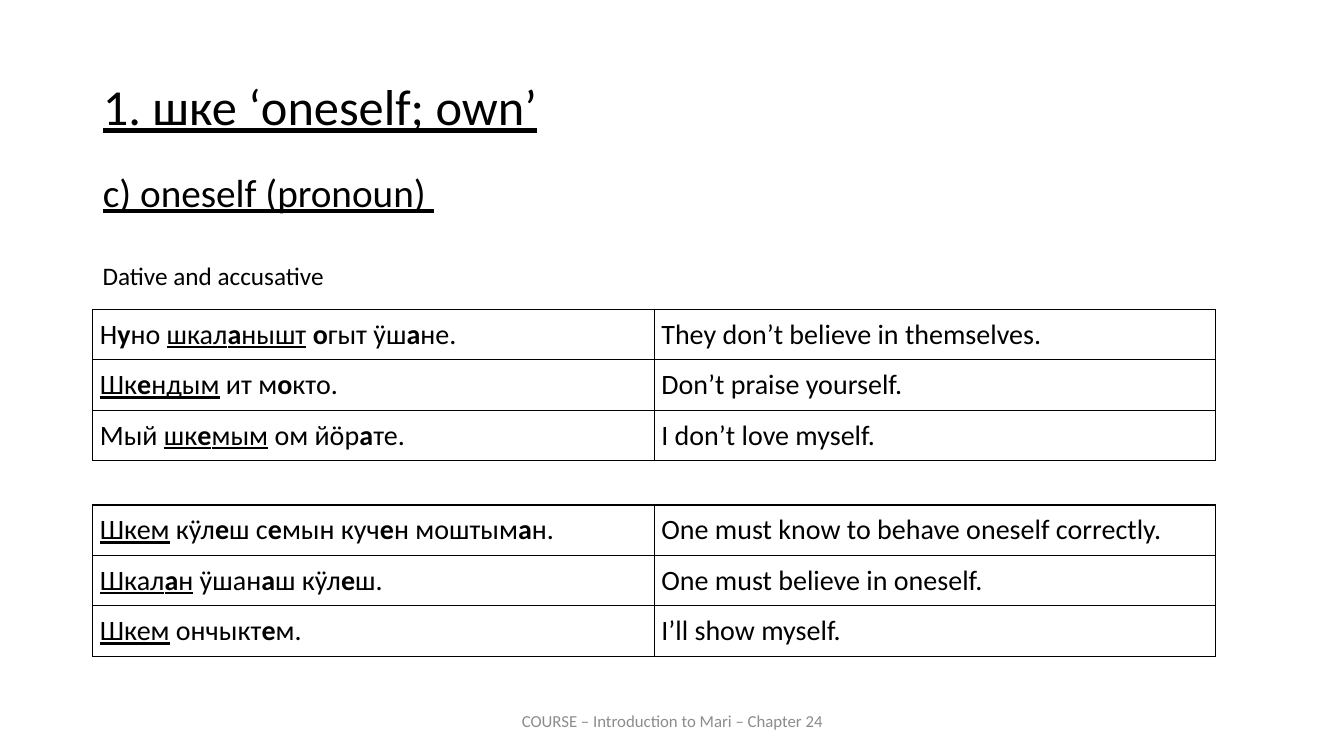
from lxml import etree
from pptx import Presentation
from pptx.dml.color import RGBColor
from pptx.enum.text import MSO_ANCHOR as Anchor, MSO_AUTO_SIZE as AutoSize, PP_ALIGN as Align
from pptx.oxml.ns import qn
from pptx.util import Inches, Pt

BLACK = RGBColor(0, 0, 0)
GREY = RGBColor(0x8C, 0x8C, 0x8C)
FONT = "Calibri"
LEFT = 0.92
COLUMN_WIDTH, ROW_HEIGHT = 5.57, 0.5

# In the sentences, * switches bold and _ switches underline.
PERSONAL = [
    ("Н*у*но _шкал*а*нышт_ *о*гыт ӱш*а*не.", "They don’t believe in themselves."),
    ("_Шк*е*ндым_ ит м*о*кто.", "Don’t praise yourself."),
    ("Мый _шк*е*мым_ ом йӧр*а*те.", "I don’t love myself."),
]
GENERAL = [
    ("_Шкем_ кӱл*е*ш с*е*мын куч*е*н моштым*а*н.",
     "One must know to behave oneself correctly."),
    ("_Шкал*а*н_ ӱшан*а*ш кӱл*е*ш.", "One must believe in oneself."),
    ("_Шкем_ ончыкт*е*м.", "I’ll show myself."),
]


def style(para, size, color=BLACK, align=Align.LEFT, underline=None):
    para.alignment = align
    font = para.font
    font.name, font.size, font.underline = FONT, Pt(size), underline
    font.color.rgb = color


def fill_text(shape, text, box, size, anchor=Anchor.TOP, **looks):
    """Place a shape, write one paragraph in it and return that paragraph."""
    shape.left, shape.top, shape.width, shape.height = map(Inches, box)
    frame = shape.text_frame
    frame.word_wrap = True
    frame.auto_size = AutoSize.NONE
    frame.vertical_anchor = anchor
    para = frame.paragraphs[0]
    para.text = text
    style(para, size, **looks)
    return para


def add_text(page, text, box, size, **looks):
    shape = page.shapes.add_textbox(*map(Inches, box))
    return fill_text(shape, text, box, size, **looks)


def remove_bullet(para):
    props = para._p.get_or_add_pPr()
    props.set("marL", "0")
    props.set("indent", "0")
    etree.SubElement(props, qn("a:buNone"))


def write_marked(para, marked):
    """Split the text at * and _ into bold and underlined runs."""
    for i, part in enumerate(marked.split("_")):
        for j, piece in enumerate(part.split("*")):
            if piece:
                span = para.add_run()
                span.text = piece
                span.font.underline = i % 2 == 1
                span.font.bold = j % 2 == 1


def add_borders(cell):
    props = cell._tc.get_or_add_tcPr()
    for index, side in enumerate(("lnL", "lnR", "lnT", "lnB")):
        line = etree.Element(qn(f"a:{side}"), w=str(Pt(1)))
        solid = etree.SubElement(line, qn("a:solidFill"))
        etree.SubElement(solid, qn("a:srgbClr"), val=str(BLACK))
        props.insert(index, line)


def add_examples(page, sentences, top):
    frame = page.shapes.add_table(
        len(sentences), 2, Inches(LEFT), Inches(top),
        Inches(2 * COLUMN_WIDTH), Inches(ROW_HEIGHT * len(sentences)))
    table = frame.table
    table.first_row = table.horz_banding = False
    for row, pair in zip(table.rows, sentences):
        for cell, marked in zip(row.cells, pair):
            cell.fill.background()
            cell.vertical_anchor = Anchor.MIDDLE
            cell.margin_left = cell.margin_right = Inches(0.07)
            cell.margin_top = cell.margin_bottom = 0
            para = cell.text_frame.paragraphs[0]
            style(para, 20, align=Align.JUSTIFY)
            write_marked(para, marked)
            add_borders(cell)


def main():
    deck = Presentation()
    deck.slide_width, deck.slide_height = Inches(13.33), Inches(7.5)
    page = deck.slides.add_slide(deck.slide_layouts[1])

    heading = fill_text(page.shapes.title, "1. шке ‘oneself; own’",
                        (LEFT, 0.76, 11.5, 0.83), 36,
                        align=Align.JUSTIFY, underline=True)
    subheading = fill_text(page.placeholders[1], "c) oneself (pronoun) ",
                           (LEFT, 1.67, 11.5, 0.58), 28, underline=True)
    for para, space in ((heading, 12), (subheading, 10)):
        para.line_spacing = 0.9
        para.space_before = Pt(space)
    remove_bullet(subheading)

    add_text(page, "Dative and accusative", (LEFT, 2.53, 6.67, 0.4), 18)
    add_examples(page, PERSONAL, 3.07)
    add_examples(page, GENERAL, 5.01)
    add_text(page, "COURSE – Introduction to Mari – Chapter 24",
             (4.42, 6.95, 4.5, 0.4), 12,
             anchor=Anchor.MIDDLE, color=GREY, align=Align.CENTER)
    deck.save("out.pptx")


if __name__ == "__main__":
    main()
